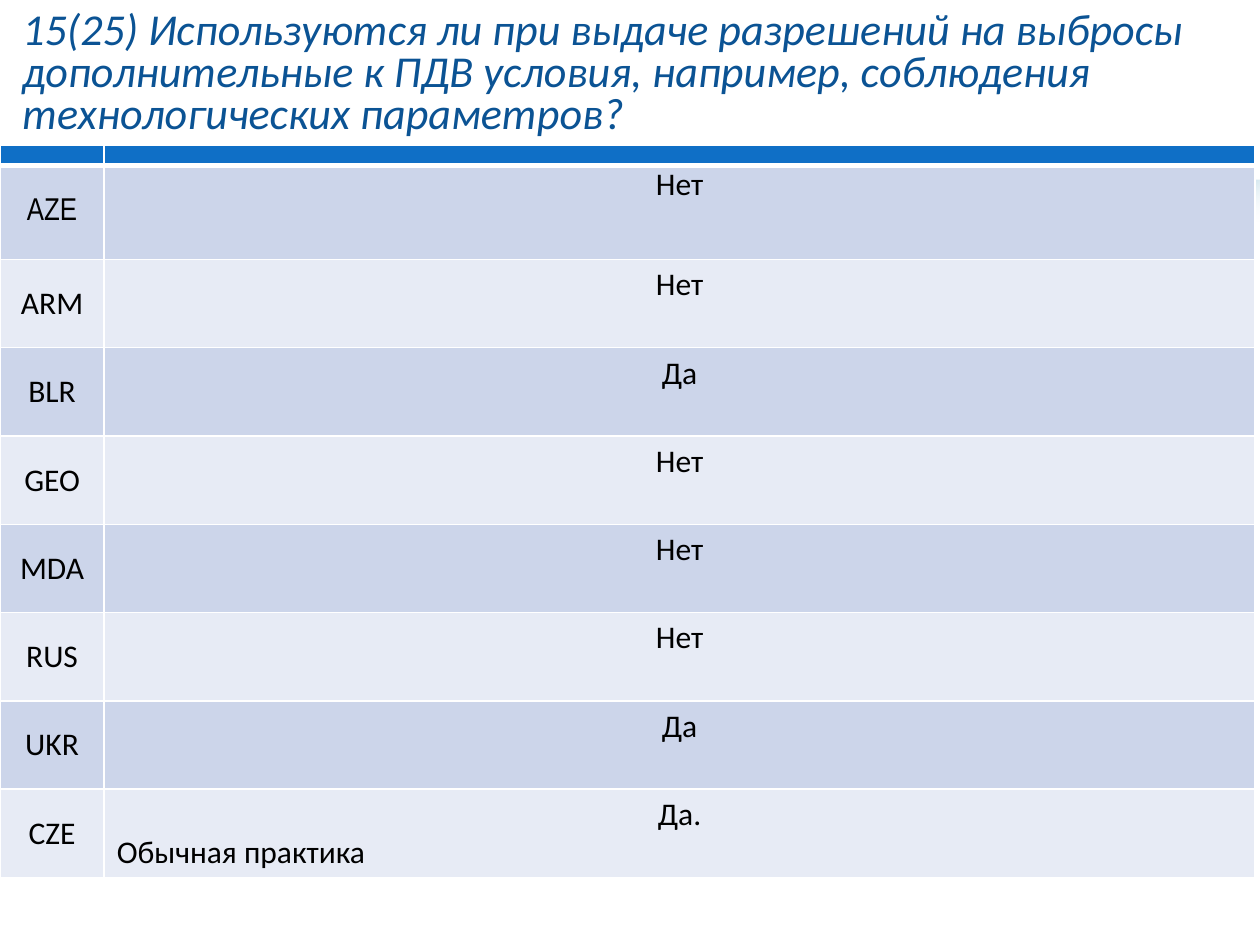
import pptx
import pptx.util
import pptx.dml.color
import pptx.enum.shapes
import pptx.enum.text
import pptx.oxml
import pptx.oxml.ns
import lxml.etree

Cm = pptx.util.Cm
Pt = pptx.util.Pt
RGB = pptx.dml.color.RGBColor.from_string
qn = pptx.oxml.ns.qn
CENTER = pptx.enum.text.PP_ALIGN.CENTER
MIDDLE = pptx.enum.text.MSO_ANCHOR.MIDDLE

COLORS = {
    "white": "FFFFFF",
    "title": "0B5394",
    "header": "0F6FC6",
    "odd": "CCD5EA",
    "even": "E7EBF5",
    "text": "000000",
    "shadow": "0076A3",
}


def style_cell(cell, fill, bottom_width=1):
    cell.fill.solid()
    cell.fill.fore_color.rgb = RGB(COLORS[fill])
    properties = cell._tc.get_or_add_tcPr()
    sides = {"lnL": 1, "lnR": 1, "lnT": 1, "lnB": bottom_width}
    for position, (side, width) in enumerate(sides.items()):
        border = pptx.oxml.parse_xml(
            f'<a:{side} {pptx.oxml.ns.nsdecls("a")} w="{Pt(width)}"><a:solidFill>'
            f'<a:srgbClr val="{COLORS["white"]}"/></a:solidFill></a:{side}>'
        )
        properties.insert(position, border)


def style_text(paragraph, size, color, font="Calibri", italic=False):
    paragraph.font.size = Pt(size)
    paragraph.font.name = font
    paragraph.font.italic = italic
    paragraph.font.color.rgb = RGB(COLORS[color])


presentation = pptx.Presentation()
presentation.slide_width = Cm(25.4)
presentation.slide_height = Cm(19.05)
slide = presentation.slides.add_slide(presentation.slide_layouts[6])

banner = slide.shapes.add_shape(
    pptx.enum.shapes.MSO_SHAPE.FLOWCHART_DOCUMENT, 0, 0, Cm(25.4), Cm(4.52)
)
banner.fill.solid()
banner.fill.fore_color.rgb = RGB(COLORS["white"])
banner.line.fill.background()
banner.shadow.inherit = False
banner._element.spPr.find(qn("a:effectLst")).append(
    pptx.oxml.parse_xml(
        f'<a:outerShdw {pptx.oxml.ns.nsdecls("a")} blurRad="{Pt(22)}" '
        f'dist="{Pt(3)}" dir="5400000" rotWithShape="0">'
        f'<a:srgbClr val="{COLORS["shadow"]}"><a:alpha val="40000"/></a:srgbClr>'
        "</a:outerShdw>"
    )
)

question = slide.shapes.add_textbox(Cm(0.2), Cm(0.33), Cm(25.1), Cm(2.36)).text_frame
question.word_wrap = True
question.vertical_anchor = MIDDLE
question.text = (
    "15(25) Используются ли при выдаче разрешений на выбросы дополнительные "
    "к ПДВ условия, например, соблюдения технологических параметров?"
)
question.paragraphs[0].line_spacing = 0.8
style_text(question.paragraphs[0], 25.2, "title", italic=True)

answers = [
    ("AZE", "Нет"),
    ("ARM", "Нет"),
    ("BLR", "Да"),
    ("GEO", "Нет"),
    ("MDA", "Нет"),
    ("RUS", "Нет"),
    ("UKR", "Да"),
    ("CZE", "Да.\nОбычная практика"),
]
row_heights = [0.4, 1.9] + [1.78] * (len(answers) - 1)

table = slide.shapes.add_table(
    len(row_heights), 2, 0, Cm(2.93), Cm(25.3), Cm(sum(row_heights))
).table
table.columns[0].width = Cm(2.1)
table.columns[1].width = Cm(23.2)
for row, height in zip(table.rows, row_heights):
    row.height = Cm(height)

for header in table.rows[0].cells:
    header.margin_top = header.margin_bottom = 0
    style_cell(header, "header", bottom_width=3)
    end_mark = lxml.etree.SubElement(
        header.text_frame.paragraphs[0]._p, qn("a:endParaRPr")
    )
    end_mark.set("sz", "800")

for number, (country, answer) in enumerate(answers, start=1):
    country_cell, answer_cell = table.rows[number].cells
    country_cell.text = country
    country_cell.vertical_anchor = MIDDLE
    answer_cell.text = answer
    for cell in (country_cell, answer_cell):
        style_cell(cell, "odd" if number % 2 else "even")
        cell.text_frame.paragraphs[0].alignment = CENTER
        for paragraph in cell.text_frame.paragraphs:
            style_text(paragraph, 18, "text")

table.cell(1, 0).text_frame.paragraphs[0].font.name = "Arial Narrow"
first_answer = table.cell(1, 1)
first_answer.margin_left = first_answer.margin_right = Cm(0.05)
first_answer.margin_top = first_answer.margin_bottom = 0

presentation.save("out.pptx")
